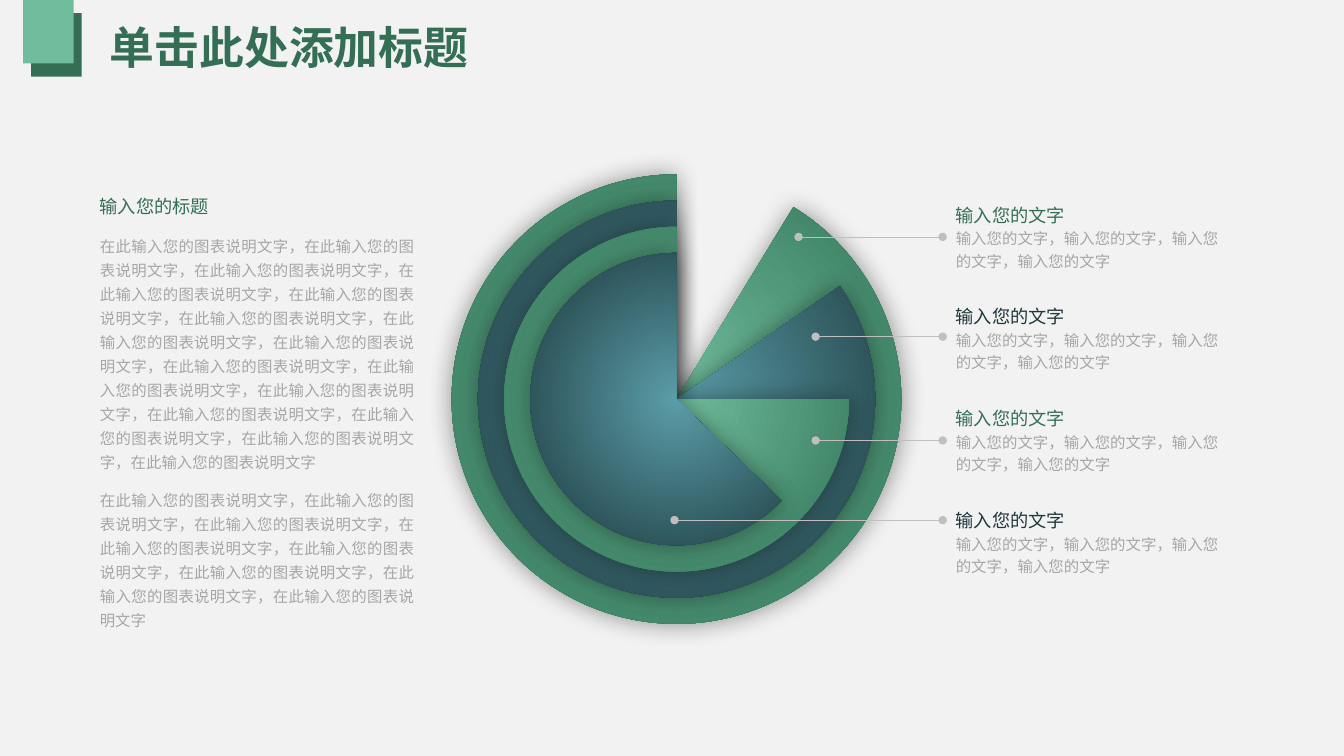
"""Build a slide with a nested pie diagram and four captions."""
from lxml import etree
from pptx import Presentation
from pptx.dml.color import RGBColor
from pptx.enum.shapes import MSO_CONNECTOR, MSO_SHAPE
from pptx.enum.text import MSO_ANCHOR, MSO_AUTO_SIZE, PP_ALIGN
from pptx.oxml.ns import qn
from pptx.util import Inches, Pt

RECT, PIE = MSO_SHAPE.RECTANGLE, MSO_SHAPE.PIE
STRAIGHT = MSO_CONNECTOR.STRAIGHT
MIDDLE, TOP = MSO_ANCHOR.MIDDLE, MSO_ANCHOR.TOP
JUSTIFY, LEFT = PP_ALIGN.JUSTIFY, PP_ALIGN.LEFT
GROW, FIXED = MSO_AUTO_SIZE.SHAPE_TO_FIT_TEXT, MSO_AUTO_SIZE.NONE

FACE = "Noto Sans CJK SC"
GREEN, DARK, GRAY, RULE = "346E55", "1F373B", "A6A6A6", "BFBFBF"
LEAF, TEAL = ("71BC9C", "307256"), ("5A9DA8", "1D383D")

TITLE = "单击此处添加标题"
HEAD = "输入您的标题"
PHRASE = "在此输入您的图表说明文字"
BODY = ["，".join([PHRASE] * count) for count in (15, 8)]
LABEL = "输入您的文字"
DETAIL = "，".join([LABEL] * 4)

BLOCKS = [(0.31, 0.13, GREEN), (0.23, 0, LEAF[0])]
PIES = [(301.33, LEAF), (325.32, TEAL), (0, LEAF), (44.01, TEAL)]
NOTES = [(GREEN, 7.92, 2.35), (DARK, 8.09, 3.34),
         (GREEN, 8.09, 4.37), (DARK, 6.69, 5.16)]
MID_X, MID_Y, RADIUS, RING = 6.71, 3.96, 2.23, 0.26
NOTE_X, NOTE_Y, PITCH = 9.35, 1.91, 1.01


def rgb(code):
    return RGBColor.from_string(code)


def add_node(parent, tag, **attrs):
    return etree.SubElement(parent, qn(tag), attrs)


def add_shape(slide, kind, *box):
    shape = slide.shapes.add_shape(kind, *map(Inches, box))
    shape.line.fill.background()
    shape.shadow.inherit = False
    return shape


def add_block(slide, left, top, color):
    block = add_shape(slide, RECT, left, top, 0.5, 0.63)
    block.fill.solid()
    block.fill.fore_color.rgb = rgb(color)


def add_pie(slide, radius, start, colors):
    pie = add_shape(slide, PIE, MID_X - radius, MID_Y - radius,
                    2 * radius, 2 * radius)
    pie.adjustments[0] = start * 0.6
    pie.adjustments[1] = 270 * 0.6
    pie.fill.gradient()
    for stop, color in zip(pie.fill.gradient_stops, colors):
        stop.color.rgb = rgb(color)
    props = pie._element.spPr
    grad = props.find(qn("a:gradFill"))
    grad.remove(grad.find(qn("a:lin")))
    ring = add_node(grad, "a:path", path="circle")
    add_node(ring, "a:fillToRect", l="50000", t="50000", r="50000", b="50000")
    glow = add_node(props.find(qn("a:effectLst")), "a:outerShdw",
                    blurRad=str(Pt(17)), dist="0", dir="0",
                    algn="ctr", rotWithShape="0")
    tint = add_node(glow, "a:srgbClr", val="000000")
    add_node(tint, "a:alpha", val="40000")


def add_text(slide, box, paras, lead, inset=(0.13, 0.07), anchor=TOP,
             align=LEFT, fit=FIXED, bold=False, gap=False):
    frame = slide.shapes.add_textbox(*map(Inches, box)).text_frame
    frame.word_wrap = True
    frame.auto_size = fit
    frame.vertical_anchor = anchor
    frame.margin_left = frame.margin_right = Inches(inset[0])
    frame.margin_top = frame.margin_bottom = Inches(inset[1])
    for i, (text, size, color) in enumerate(paras):
        para = frame.add_paragraph() if i else frame.paragraphs[0]
        para.text = text
        para.alignment = align
        para.line_spacing = lead
        if gap:
            para.space_before, para.space_after = Pt(size * 0.2), Pt(8)
        para.font.size = Pt(size)
        para.font.bold = bold
        para.font.color.rgb = rgb(color)
        para.font.name = FACE
        add_node(para._p.pPr.find(qn("a:defRPr")), "a:ea", typeface=FACE)


def add_lead(slide, end, y):
    line = slide.shapes.add_connector(
        STRAIGHT, *map(Inches, (NOTE_X, y, end, y)))
    line.line.color.rgb = rgb(RULE)
    line.line.width = Pt(0.5)
    props = line._element.spPr
    for tag in ("a:headEnd", "a:tailEnd"):
        add_node(props.find(qn("a:ln")), tag, type="oval")
    add_node(props, "a:effectLst")


def main():
    deck = Presentation()
    deck.slide_width, deck.slide_height = Inches(13.33), Inches(7.5)
    slide = deck.slides.add_slide(deck.slide_layouts[6])
    slide.background.fill.solid()
    slide.background.fill.fore_color.rgb = rgb("F2F2F2")
    for block in BLOCKS:
        add_block(slide, *block)
    for i, (start, colors) in enumerate(PIES):
        add_pie(slide, RADIUS - i * RING, start, colors)
    for i, (color, end, y) in enumerate(NOTES):
        add_text(slide, (NOTE_X, NOTE_Y + i * PITCH, 2.99, 0.83),
                 [(LABEL, 13, color), (DETAIL, 11, GRAY)], 1.2, fit=GROW)
        add_lead(slide, end, y)
    add_text(slide, (0.86, 1.8, 3.38, 4.16),
             [(HEAD, 13, GREEN)] + [(text, 11, GRAY) for text in BODY],
             1.3, align=JUSTIFY, gap=True)
    add_text(slide, (0.99, 0.13, 11.5, 0.73), [(TITLE, 32, GREEN)], 0.9,
             inset=(0.1, 0.05), anchor=MIDDLE, bold=True)
    deck.save("out.pptx")


if __name__ == "__main__":
    main()
